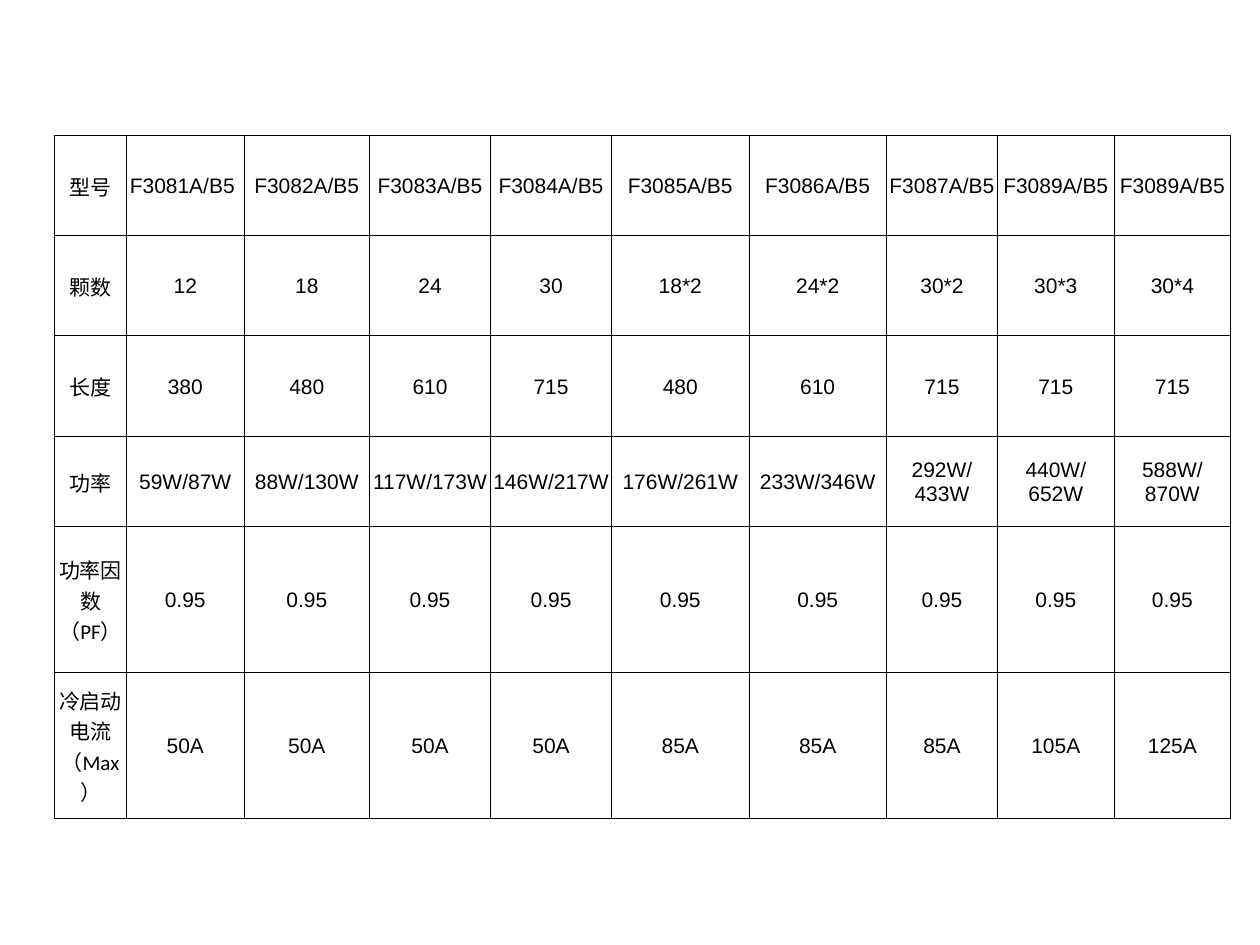
from dataclasses import dataclass
from lxml.etree import SubElement
from pptx import Presentation
from pptx.dml.color import RGBColor as Rgb
from pptx.enum.text import MSO_ANCHOR as Anchor, PP_ALIGN as Align
from pptx.oxml import parse_xml
from pptx.oxml.ns import qn
from pptx.util import Cm, Pt


@dataclass(frozen=True)
class Theme:
    ink: str = "000000"
    size: float = 12
    rule: float = 0.5
    font: str = "Arial"
    alt: str = "Calibri"


THEME = Theme()
NS = "http://schemas.openxmlformats.org/drawingml/2006/main"
PAD = 0.03

# Column widths and row heights in cm
WIDTHS = [1.45, 2.37, 2.53, 2.44, 2.44, 2.77, 2.77, 2.24, 2.35, 2.35]
HEIGHTS = [2.02, 2.02, 2.02, 1.82, 2.94, 2.94]

ROWS = [
    ["型号", "F3081A/B5 ", "F3082A/B5", "F3083A/B5", "F3084A/B5",
     "F3085A/B5", "F3086A/B5", "F3087A/B5", "F3089A/B5", "F3089A/B5"],
    ["颗数", "12", "18", "24", "30", "18*2", "24*2", "30*2", "30*3", "30*4"],
    ["长度", "380", "480", "610", "715", "480", "610", "715", "715", "715"],
    ["功率", "59W/87W", "88W/130W", "117W/173W", "146W/217W", "176W/261W",
     "233W/346W", "292W/433W", "440W/652W", "588W/870W"],
    ["功率因数（PF）"] + ["0.95"] * 9,
    ["冷启动电流（Max）"] + ["50A"] * 4 + ["85A"] * 3 + ["105A", "125A"],
]


def add_rules(cell):
    """Draw a thin line on all four sides of a cell."""
    props = cell._tc.get_or_add_tcPr()
    for spot, side in enumerate(("lnL", "lnR", "lnT", "lnB")):
        line = parse_xml(f'<a:{side} xmlns:a="{NS}" w="{Pt(THEME.rule)}"/>')
        fill = SubElement(line, qn("a:solidFill"))
        SubElement(fill, qn("a:srgbClr"), val=THEME.ink)
        props.insert(spot, line)


def fill_cell(cell, text, font):
    cell.fill.background()
    cell.vertical_anchor = Anchor.MIDDLE
    cell.margin_left = cell.margin_right = cell.margin_top = Cm(PAD)
    cell.margin_bottom = 0
    add_rules(cell)
    # Text
    para = cell.text_frame.paragraphs[0]
    para.text = text
    para.alignment = Align.CENTER
    for run in para.runs:
        run.font.name = font
        run.font.size = Pt(THEME.size)
        run.font.color.rgb = Rgb.from_string(THEME.ink)


def add_specs(slide, left, top):
    """Place the table of model data with its corner at left, top."""
    frame = slide.shapes.add_table(
        len(ROWS), len(WIDTHS), Cm(left), Cm(top),
        Cm(sum(WIDTHS)), Cm(sum(HEIGHTS)))
    table = frame.table
    table.first_row = table.horz_banding = False
    for col, width in zip(table.columns, WIDTHS):
        col.width = Cm(width)
    for row, height, texts in zip(table.rows, HEIGHTS, ROWS):
        row.height = Cm(height)
        for cell, text in zip(row.cells, texts):
            # Labels with a bracketed term use the second font
            fill_cell(cell, text, THEME.alt if "（" in text else THEME.font)


def main():
    deck = Presentation()
    deck.slide_width, deck.slide_height = Cm(25.4), Cm(19.05)
    slide = deck.slides.add_slide(deck.slide_layouts[6])
    add_specs(slide, 1.1, 2.73)
    deck.save("out.pptx")


if __name__ == "__main__":
    main()
